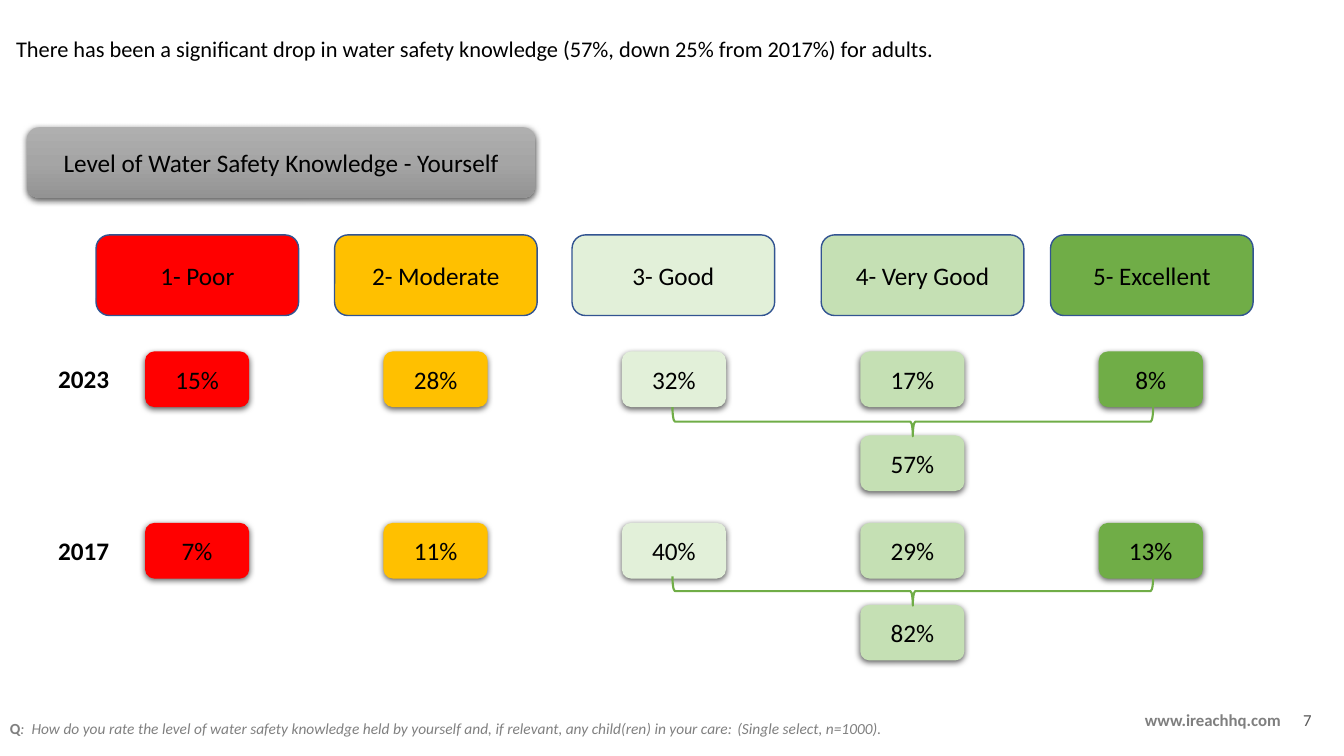
"""Build the slide on adults' own water safety knowledge, 2023 against 2017."""
from copy import deepcopy
from dataclasses import dataclass

from lxml.etree import SubElement
from pptx import Presentation
from pptx.dml.color import RGBColor
from pptx.enum.shapes import MSO_SHAPE as Preset
from pptx.enum.text import MSO_ANCHOR as Anchor, MSO_AUTO_SIZE as AutoSize, PP_ALIGN as Align
from pptx.oxml.ns import qn
from pptx.shapes.autoshape import Shape
from pptx.slide import Slide
from pptx.text.text import TextFrame
from pptx.util import Pt

FONT = "Calibri"
BLACK = "000000"
GRAY = "7F7F7F"
GREEN = "70AD47"
TOTAL_COLOR = "C5E0B4"
HEADING_LINE = "325491"
CHIP_LEFT, CHIP_STEP = 103.6, 170.3
CHIP_WIDTH, CHIP_HEIGHT = 74.4, 39.8
BRACE_WIDTH, BRACE_HEIGHT = 20.9, 343.4


@dataclass(frozen=True)
class Box:
    left: float
    top: float
    width: float
    height: float


@dataclass(frozen=True)
class Words:
    text: str
    size: float = 18
    color: str = BLACK
    bold: bool = False
    italic: bool = False


@dataclass(frozen=True)
class Rating:
    name: str
    color: str
    heading_left: float


@dataclass(frozen=True)
class Survey:
    year: str
    top: float
    shares: tuple[str, ...]
    total: str
    total_top: float


RATINGS = (
    Rating("1- Poor", "FF0000", 68.6),
    Rating("2- Moderate", "FFC000", 239),
    Rating("3- Good", "E2F0D9", 408.6),
    Rating("4- Very Good", TOTAL_COLOR, 586.6),
    Rating("5- Excellent", GREEN, 750.4),
)
SURVEYS = (
    Survey("2023", 251, ("15%", "28%", "32%", "17%", "8%"), "57%", 311),
    Survey("2017", 373.5, ("7%", "11%", "40%", "29%", "13%"), "82%", 432),
)
BANNER_STOPS = ((0, "AFAFAF"), (0.5, "A5A5A5"), (1, "939393"))


def rgb(color: str) -> RGBColor:
    return RGBColor.from_string(color)


def place(shape: Shape, box: Box) -> None:
    shape.left, shape.top = Pt(box.left), Pt(box.top)
    shape.width, shape.height = Pt(box.width), Pt(box.height)


def write(frame: TextFrame, *parts: Words, align: Align = Align.LEFT,
          anchor: Anchor = Anchor.TOP, spacing: float = 1) -> None:
    frame.word_wrap = True
    frame.auto_size = AutoSize.NONE
    frame.vertical_anchor = anchor
    paragraph = frame.paragraphs[0]
    paragraph.alignment = align
    paragraph.line_spacing = spacing
    for part in parts:
        run = paragraph.add_run()
        run.text = part.text
        run.font.name = FONT
        run.font.size = Pt(part.size)
        run.font.bold = part.bold
        run.font.italic = part.italic
        run.font.color.rgb = rgb(part.color)


def add_text(slide: Slide, box: Box, *parts: Words, align: Align = Align.LEFT,
             anchor: Anchor = Anchor.TOP, spacing: float = 1) -> None:
    shape = slide.shapes.add_textbox(0, 0, 0, 0)
    place(shape, box)
    write(shape.text_frame, *parts, align=align, anchor=anchor, spacing=spacing)


def add_card(slide: Slide, box: Box, label: str, color: str) -> Shape:
    shape = slide.shapes.add_shape(Preset.ROUNDED_RECTANGLE, 0, 0, 0, 0)
    place(shape, box)
    shape.shadow.inherit = False
    shape.fill.solid()
    shape.fill.fore_color.rgb = rgb(color)
    shape.line.fill.background()
    write(shape.text_frame, Words(label), align=Align.CENTER, anchor=Anchor.MIDDLE)
    return shape


def add_shadow(shape: Shape) -> None:
    effects = shape._element.spPr.find(qn("a:effectLst"))
    shadow = SubElement(effects, qn("a:outerShdw"), blurRad=str(Pt(4.5)), dist=str(Pt(1.5)),
                        dir="5400000", algn="ctr", rotWithShape="0")
    black = SubElement(shadow, qn("a:srgbClr"), val=BLACK)
    SubElement(black, qn("a:alpha"), val="63000")


def add_heading(slide: Slide, rating: Rating) -> None:
    heading = add_card(slide, Box(rating.heading_left, 167.8, 144.7, 57.6),
                       rating.name, rating.color)
    heading.line.color.rgb = rgb(HEADING_LINE)
    heading.line.width = Pt(1)


def add_chip(slide: Slide, column: int, top: float, label: str, color: str) -> None:
    left = CHIP_LEFT + column * CHIP_STEP
    add_shadow(add_card(slide, Box(left, top, CHIP_WIDTH, CHIP_HEIGHT), label, color))


def add_brace(slide: Slide, center_y: float) -> None:
    center_x = 652
    brace = slide.shapes.add_shape(Preset.RIGHT_BRACE, 0, 0, 0, 0)
    place(brace, Box(center_x - BRACE_WIDTH / 2, center_y - BRACE_HEIGHT / 2,
                     BRACE_WIDTH, BRACE_HEIGHT))
    brace.rotation = 90
    brace.shadow.inherit = False
    brace.fill.background()
    brace.line.color.rgb = rgb(GREEN)
    brace.line.width = Pt(1.5)


def add_survey(slide: Slide, survey: Survey) -> None:
    add_text(slide, Box(19.4, survey.top + 5.3, 80.6, 29),
             Words(survey.year, bold=True), align=Align.CENTER)
    for column, (rating, share) in enumerate(zip(RATINGS, survey.shares)):
        add_chip(slide, column, survey.top, share, rating.color)
    add_chip(slide, 3, survey.total_top, survey.total, TOTAL_COLOR)
    add_brace(slide, survey.total_top - 9.8)


def add_banner(slide: Slide) -> None:
    banner = add_card(slide, Box(19.4, 90.9, 362.9, 50.4),
                      "Level of Water Safety Knowledge - Yourself", "A5A5A5")
    banner.fill.gradient()
    banner.fill.gradient_angle = 270
    stop_list = banner._element.spPr.find(".//" + qn("a:gsLst"))
    stop_list.insert(1, deepcopy(stop_list[0]))
    for stop, (position, color) in zip(banner.fill.gradient_stops, BANNER_STOPS):
        stop.position = position
        stop.color.rgb = rgb(color)
    add_shadow(banner)


def add_footer(slide: Slide) -> None:
    add_text(slide, Box(0, 509.8, 810.7, 21), Words("Q", 11, GRAY, bold=True),
             Words(":  How do you rate the level of water safety knowledge held by yourself and, "
                   "if relevant, any child(ren) in your care: ", 11, "808080", italic=True),
             Words("(Single select, n=1000).", 11, GRAY, italic=True))
    add_text(slide, Box(810.7, 501.1, 134.6, 27.4),
             Words("www.ireachhq.com", 12, GRAY, bold=True), anchor=Anchor.MIDDLE, spacing=0.9)
    add_text(slide, Box(923.8, 505.4, 24.5, 28.8), Words("7", 12, "595959"), spacing=0.9)


def main() -> None:
    presentation = Presentation()
    presentation.slide_width, presentation.slide_height = Pt(960), Pt(540)
    slide = presentation.slides.add_slide(presentation.slide_layouts[5])
    title = slide.shapes.title
    place(title, Box(4.3, 21.6, 780.5, 26.6))
    write(title.text_frame, Words("There has been a significant drop in water safety knowledge "
                                  "(57%, down 25% from 2017%) for adults.", 16))
    add_banner(slide)
    for rating in RATINGS:
        add_heading(slide, rating)
    for survey in SURVEYS:
        add_survey(slide, survey)
    add_footer(slide)
    presentation.save("out.pptx")


if __name__ == "__main__":
    main()
